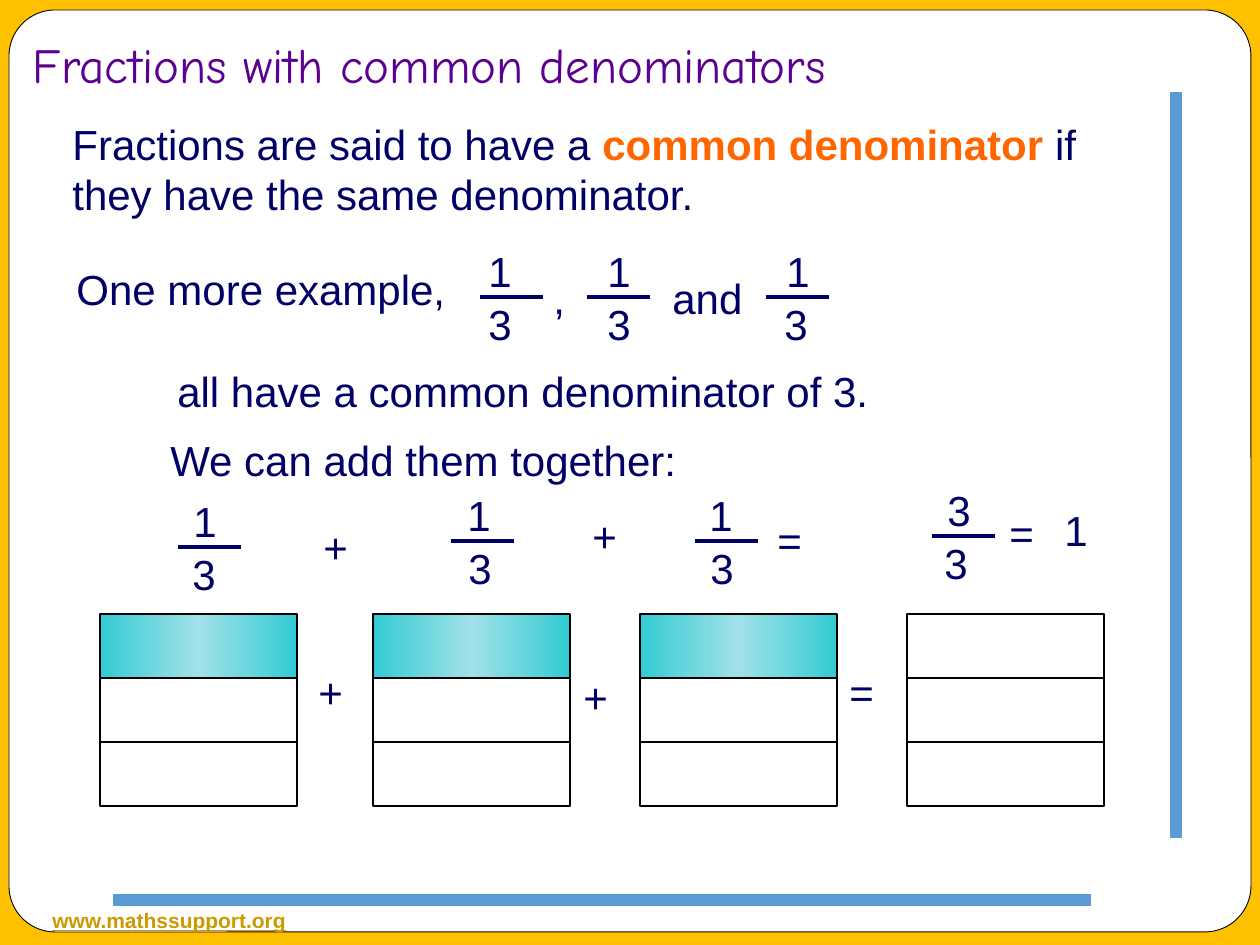
from copy import deepcopy
from dataclasses import dataclass

from lxml.etree import SubElement
from pptx import Presentation
from pptx.dml.color import RGBColor
from pptx.enum.shapes import MSO_CONNECTOR, MSO_SHAPE
from pptx.enum.text import MSO_ANCHOR, MSO_AUTO_SIZE, PP_ALIGN
from pptx.oxml.ns import qn
from pptx.util import Emu, Pt


@dataclass(frozen=True)
class Theme:
    body_font: str = "Arial"
    title_font: str = "Comic Neue"
    title_size: int = 28
    body_size: int = 24
    link_size: int = 12
    title: str = "5B0091"
    ink: str = "010066"
    accent: str = "FF6600"
    link: str = "CC9900"
    border: str = "FFC000"
    paper: str = "FFFFFF"
    outline: str = "000000"
    rail: str = "5B9BD5"
    shade_edge: str = "33CBD3"
    shade_middle: str = "A2E1E8"


THEME = Theme()
PX_PER_INCH = 126

TITLE = "Fractions with common denominators"
DEFINITION = [
    ("Fractions are said to have a ", THEME.ink, False),
    ("common denominator", THEME.accent, True),
    (" if they have the same denominator.", THEME.ink, False),
]
WEBSITE = "www.mathssupport.org"

# text, left, top, width
LABELS = [
    ("One more example,", 64, 257, 398),
    ("all have a common denominator of 3.", 165, 359, 741),
    ("We can add them together:", 158, 428, 532),
    (",", 541, 266, 37),
    ("and", 660, 266, 96),
    ("+", 311, 515, 50),
    ("+", 580, 504, 50),
    ("=", 765, 508, 50),
    ("=", 997, 501, 50),
    ("1", 1052, 498, 49),
    ("+", 306, 660, 50),
    ("+", 571, 665, 50),
    ("=", 837, 660, 50),
]
# numerator, denominator, bar left, bar top, numerator shift, denominator shift
FRACTIONS = [
    ("1", "3", 480, 297, -4, -4),
    ("1", "3", 587, 297, 8, 8),
    ("1", "3", 766, 297, 8, 6),
    ("1", "3", 178, 547, 3, 2),
    ("1", "3", 451, 541, 4, 5),
    ("1", "3", 695, 541, 2, 3),
    ("3", "3", 932, 536, 3, 0),
]
BAR_WIDTH, DIGIT_WIDTH, LINE_HEIGHT = 63, 49, 63
NUMERATOR_RISE, DENOMINATOR_RISE = 58, 5

# left edge, number of shaded parts
WHOLES = [(100, 1), (373, 1), (640, 1), (907, 0)]
PARTS, WHOLE_TOP, PART_WIDTH, PART_HEIGHT = 3, 614, 197, 64

RAILS = [(1091, 900, 113, 900), (1176, 92, 1176, 838)]


def px(*lengths):
    return [Emu(round(length * 914400 / PX_PER_INCH)) for length in lengths]


def rgb(code):
    return RGBColor.from_string(code)


def add_span(para, text, color, size=THEME.body_size, font=THEME.body_font, bold=False):
    span = para.add_run()
    span.text = text
    span.font.name = font
    span.font.size = Pt(size)
    span.font.bold = bold
    span.font.color.rgb = rgb(color)
    return span


def add_text(shapes, place, spans, wrap=False):
    """Add a text box; each span is a text, a colour and a bold flag."""
    box = shapes.add_textbox(*px(*place))
    box.text_frame.word_wrap = wrap
    box.text_frame.auto_size = MSO_AUTO_SIZE.SHAPE_TO_FIT_TEXT
    for text, color, bold in spans:
        add_span(box.text_frame.paragraphs[0], text, color, bold=bold)
    return box


def add_label(shapes, text, left, top, width):
    add_text(shapes, (left, top, width, LINE_HEIGHT), [(text, THEME.ink, False)])


def add_line(shapes, ends, color, width):
    line = shapes.add_connector(MSO_CONNECTOR.STRAIGHT, *px(*ends))
    line.line.color.rgb = rgb(color)
    line.line.width = Pt(width)
    SubElement(line.element.spPr, qn("a:effectLst"))


def add_panel(shapes, kind, place, fill=None, line_width=None):
    panel = shapes.add_shape(kind, *px(*place))
    panel.shadow.inherit = False
    if fill:
        panel.fill.solid()
        panel.fill.fore_color.rgb = rgb(fill)
    else:
        panel.fill.background()
    if line_width:
        panel.line.color.rgb = rgb(THEME.outline)
        panel.line.width = Pt(line_width)
    else:
        panel.line.fill.background()
    return panel


def shade(panel):
    """Fill with a gradient that is lightest in the middle."""
    panel.fill.gradient()
    panel.fill.gradient_angle = 0
    stop_list = panel.element.xpath(".//a:gsLst")[0]
    stop_list.insert(1, deepcopy(stop_list[0]))
    colors = (THEME.shade_edge, THEME.shade_middle, THEME.shade_edge)
    for index, (stop, color) in enumerate(zip(panel.fill.gradient_stops, colors)):
        stop.position = index / 2
        stop.color.rgb = rgb(color)


def add_frame(page):
    add_panel(page.shapes, MSO_SHAPE.RECTANGLE, (0, 0, 1260, 945), THEME.border)
    sheet = add_panel(page.shapes, MSO_SHAPE.ROUNDED_RECTANGLE,
                      (9, 10, 1242, 922), THEME.paper, 0.5)
    sheet.adjustments[0] = 0.05
    website = add_text(page.shapes, (40, 901, 262, 38), [])
    span = add_span(website.text_frame.paragraphs[0], WEBSITE, THEME.link,
                    THEME.link_size, bold=True)
    span.font.underline = True
    for ends in RAILS:
        add_line(page.shapes, ends, THEME.rail, 6.5)


def add_title(page):
    title = page.shapes.title
    title.element.getparent().append(title.element)  # in front of the frame
    title.left, title.top, title.width, title.height = px(20, 25, 1029, 81)
    frame = title.text_frame
    frame.vertical_anchor = MSO_ANCHOR.BOTTOM
    frame.margin_left, frame.margin_top, frame.margin_right, frame.margin_bottom = px(13, 6, 13, 13)
    frame.paragraphs[0].alignment = PP_ALIGN.LEFT
    add_span(frame.paragraphs[0], TITLE, THEME.title, THEME.title_size, THEME.title_font)


def add_fraction(page, numerator, denominator, left, top, upper_shift, lower_shift):
    shapes = page.shapes.add_group_shape().shapes
    add_label(shapes, numerator, left + upper_shift, top - NUMERATOR_RISE, DIGIT_WIDTH)
    add_line(shapes, (left, top, left + BAR_WIDTH, top), THEME.ink, 2.25)
    add_label(shapes, denominator, left + lower_shift, top - DENOMINATOR_RISE, DIGIT_WIDTH)


def add_whole(page, left, shaded):
    for index in range(PARTS):
        place = (left, WHOLE_TOP + index * PART_HEIGHT, PART_WIDTH, PART_HEIGHT)
        part = add_panel(page.shapes, MSO_SHAPE.RECTANGLE, place, line_width=0.75)
        if index < shaded:
            shade(part)


def main():
    deck = Presentation()
    deck.slide_width, deck.slide_height = px(1260, 945)
    page = deck.slides.add_slide(deck.slide_layouts[5])
    add_frame(page)
    add_title(page)
    add_text(page.shapes, (60, 112, 1105, 113), DEFINITION, wrap=True)
    for label in LABELS:
        add_label(page.shapes, *label)
    for fraction in FRACTIONS:
        add_fraction(page, *fraction)
    for whole in WHOLES:
        add_whole(page, *whole)
    deck.save("out.pptx")


if __name__ == "__main__":
    main()
